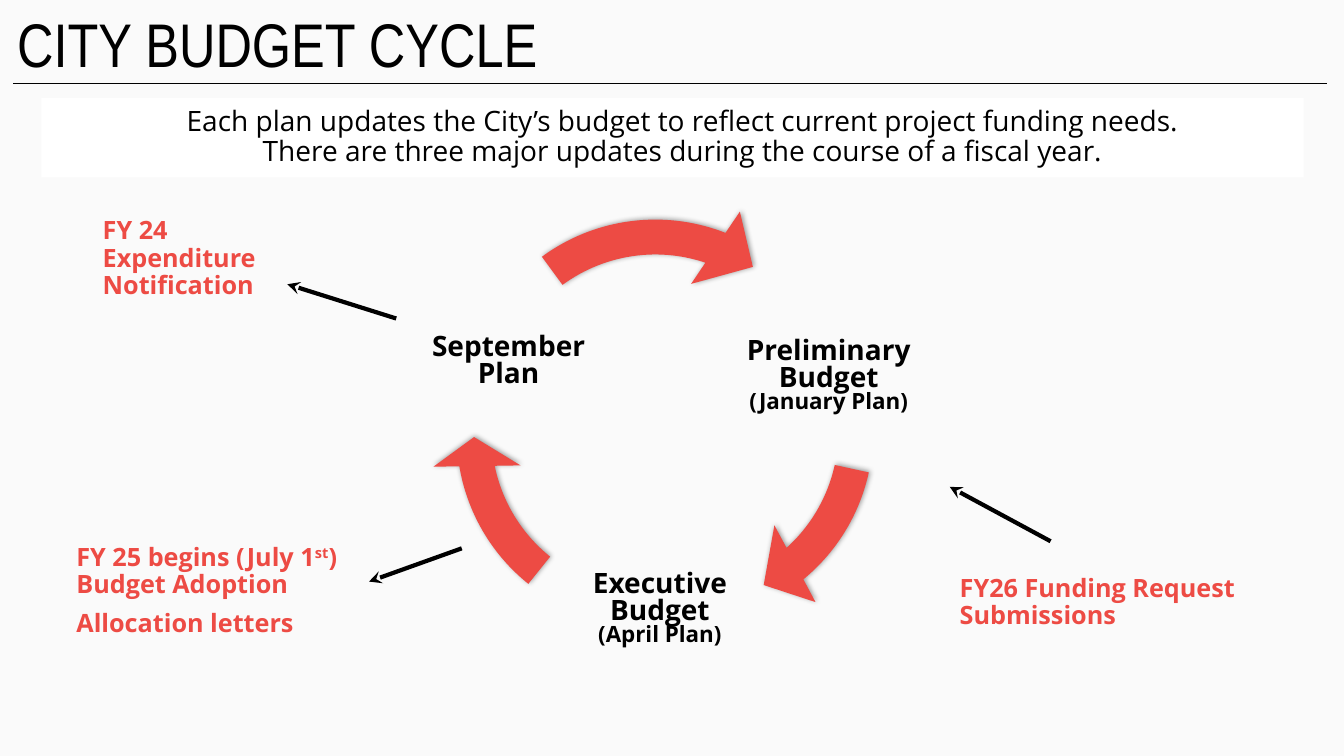
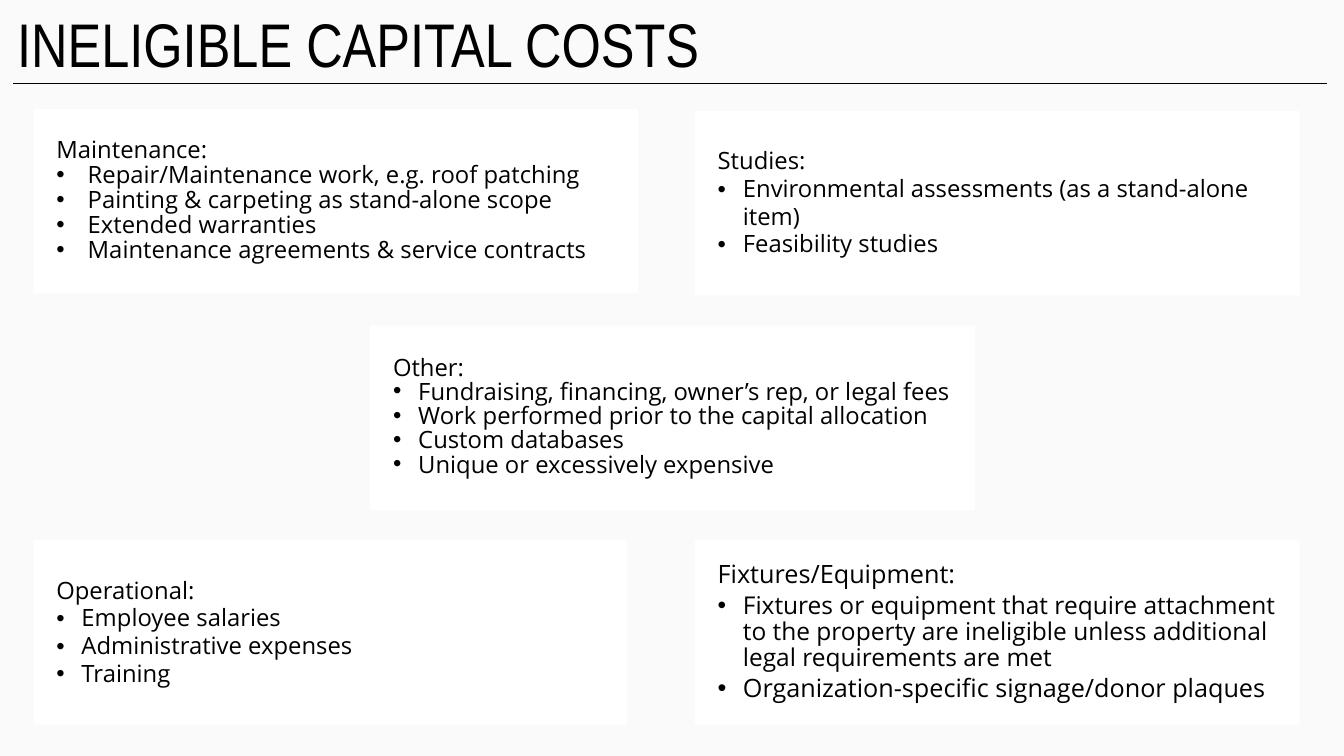
"""Build two slides on the city budget cycle and ineligible capital costs."""
import pptx
import pptx.dml.color
import pptx.enum.shapes
import pptx.enum.text
import pptx.oxml
import pptx.oxml.ns
import pptx.util

Inches = pptx.util.Inches
Pt = pptx.util.Pt
RGBColor = pptx.dml.color.RGBColor
qn = pptx.oxml.ns.qn
PP_ALIGN = pptx.enum.text.PP_ALIGN
MSO_ANCHOR = pptx.enum.text.MSO_ANCHOR
MSO_SHAPE = pptx.enum.shapes.MSO_SHAPE

PAPER = RGBColor(0xFA, 0xFA, 0xFA)
WHITE = RGBColor(0xFF, 0xFF, 0xFF)
BLACK = RGBColor(0x00, 0x00, 0x00)
CORAL = RGBColor(0xED, 0x4B, 0x44)
TITLE_FONT = "Arial Narrow"
BODY_FONT = "Open Sans"
ADJUSTMENT_PER_DEGREE = 0.6


def add_xml(parent, markup):
    namespaces = pptx.oxml.ns.nsdecls("a")
    element = pptx.oxml.parse_xml(markup.replace("/>", f" {namespaces}/>", 1)
                                  if markup.endswith("/>") and markup.count("<") == 1
                                  else markup.replace(">", f" {namespaces}>", 1))
    parent.append(element)


def place(shape, left, top, width, height):
    shape.left, shape.top = Inches(left), Inches(top)
    shape.width, shape.height = Inches(width), Inches(height)


def add_line(slide, start, end, width, arrow=False):
    line = slide.shapes.add_connector(
        pptx.enum.shapes.MSO_CONNECTOR.STRAIGHT, *map(Inches, start + end))
    line.line.color.rgb = BLACK
    line.line.width = Pt(width)
    if arrow:
        add_xml(line.line._get_or_add_ln(), '<a:tailEnd type="stealth"/>')
    add_xml(line.element.spPr, "<a:effectLst/>")
    return line


def style_master(presentation, layout):
    master = presentation.slide_master
    master.background.fill.solid()
    master.background.fill.fore_color.rgb = PAPER
    title_level = master.element.find(f".//{qn('p:titleStyle')}/{qn('a:lvl1pPr')}")
    title_level.set("algn", "l")
    title_level.set("marL", str(Inches(0.07)))
    title_level.find(f".//{qn('a:latin')}").set("typeface", TITLE_FONT)
    place(layout.placeholders[0], 0, 0, 13.33, 0.85)


def add_slide(presentation, layout, title):
    slide = presentation.slides.add_slide(layout)
    slide.shapes.title.text_frame.text = title
    slide.shapes.title.text_frame.auto_size = pptx.enum.text.MSO_AUTO_SIZE.NONE
    return slide


def add_title_rule(slide, layout):
    rule = add_line(slide, (0.13, 0.83), (13.16, 0.83), 1)
    layout.shapes.element.append(rule.element)


def set_indent(paragraph, left, first=0, bullet=False):
    properties = paragraph._p.get_or_add_pPr()
    properties.set("marL", str(Inches(left)))
    properties.set("indent", str(Inches(first)))
    if bullet:
        add_xml(properties, '<a:buClr><a:srgbClr val="000000"/></a:buClr>')
        add_xml(properties, '<a:buFont typeface="Arial"/>')
        add_xml(properties, '<a:buChar char="•"/>')
    else:
        add_xml(properties, "<a:buNone/>")


def style_paragraph(paragraph, size, color=BLACK, bold=False, align=PP_ALIGN.LEFT,
                    spacing=0.9, before=0):
    paragraph.alignment = align
    paragraph.line_spacing = spacing
    paragraph.space_before = Pt(before)
    for run in paragraph.runs:
        run.font.name = BODY_FONT
        run.font.size = Pt(size)
        run.font.bold = bold
        run.font.color.rgb = color


def fill_panel(shape, box, color, lines):
    place(shape, *box)
    shape.fill.solid()
    shape.fill.fore_color.rgb = color
    shape.line.fill.background()
    shape.shadow.inherit = False
    frame = shape.text_frame
    frame.word_wrap = True
    frame.auto_size = pptx.enum.text.MSO_AUTO_SIZE.NONE
    frame.vertical_anchor = MSO_ANCHOR.MIDDLE
    frame.text = "\n".join(lines)
    return frame.paragraphs


def add_rectangle(slide):
    return slide.shapes.add_shape(MSO_SHAPE.RECTANGLE, 0, 0, Inches(1), Inches(1))


def add_callout(slide, box, lines):
    paragraphs = fill_panel(add_rectangle(slide), box, PAPER, lines)
    for paragraph in paragraphs:
        set_indent(paragraph, 0.25)
        style_paragraph(paragraph, 18, CORAL, bold=True)
    return paragraphs


def add_stage(slide, box, name, note=None):
    frame = slide.shapes.add_textbox(*map(Inches, box)).text_frame
    frame.word_wrap = True
    frame.vertical_anchor = MSO_ANCHOR.MIDDLE
    frame.margin_left = frame.margin_right = Inches(0.03)
    frame.margin_top = frame.margin_bottom = Inches(0.03)
    frame.text = f"{name}\n{note}" if note else name
    for paragraph, size in zip(frame.paragraphs, (20, 16)):
        style_paragraph(paragraph, size, bold=True, align=PP_ALIGN.CENTER, spacing=0.8)


def add_cycle_arrow(slide, left, top, head, end, start, rotation=0):
    arrow = slide.shapes.add_shape(MSO_SHAPE.CIRCULAR_ARROW, Inches(left), Inches(top),
                                   Inches(4.32), Inches(4.32))
    angles = [angle * ADJUSTMENT_PER_DEGREE for angle in (head, end, start)]
    for index, value in enumerate([0.08, *angles, 0.1]):
        arrow.adjustments[index] = value
    arrow.rotation = rotation
    arrow.fill.solid()
    arrow.fill.fore_color.rgb = CORAL
    arrow.line.fill.background()
    add_xml(arrow.element.spPr,
            f'<a:effectLst><a:outerShdw blurRad="{Pt(4)}" dist="{Pt(1)}" dir="18900000">'
            '<a:srgbClr val="000000"><a:alpha val="40000"/></a:srgbClr>'
            "</a:outerShdw></a:effectLst>")


def add_cost_panel(shape, box, lines, sizes, spacing, before=0, indent=0.38, hanging=0.25):
    paragraphs = fill_panel(shape, box, WHITE, lines)
    for index, paragraph in enumerate(paragraphs):
        is_item = index > 0
        set_indent(paragraph, indent if is_item else 0.13,
                   -hanging if is_item else 0, bullet=is_item)
        style_paragraph(paragraph, sizes[min(index, len(sizes) - 1)], spacing=spacing,
                        before=before if is_item else 0)


def build_cycle(slide):
    add_stage(slide, (7.24, 2.82, 1.96, 1.83), "Preliminary Budget", "(January Plan)")
    add_stage(slide, (5.63, 5.13, 1.83, 1.83), "Executive Budget", "(April Plan)")
    add_stage(slide, (4.13, 2.68, 1.83, 1.83), "September Plan")
    add_cycle_arrow(slide, 4.6, 2.12, 12.47, 49.4, 12.36)
    add_cycle_arrow(slide, 4.27, 2.15, 9.6, 169.54, 128.77)
    add_cycle_arrow(slide, 4.34, 1.92, 13.84, 281.9, 225.42, rotation=8.3)

    introduction = fill_panel(slide.placeholders[1], (0.41, 0.97, 12.52, 0.79), WHITE, [
        "Each plan updates the City’s budget to reflect current project funding needs.",
        "There are three major updates during the course of a fiscal year."])
    for paragraph in introduction:
        set_indent(paragraph, 0.2)
        style_paragraph(paragraph, 20, align=PP_ALIGN.CENTER)

    adoption = add_callout(slide, (0.41, 5.2, 3.13, 1.33), [
        "FY 25 begins (July 1", "Budget Adoption", "Allocation letters"])
    ordinal = adoption[0].add_run()
    ordinal.text = "st"
    adoption[0].add_run().text = ")"
    style_paragraph(adoption[0], 18, CORAL, bold=True)
    ordinal.font._element.set("baseline", "30000")
    adoption[2].space_before = Pt(8.5)
    add_callout(slide, (0.67, 1.97, 2.11, 1.2), ["FY 24", "Expenditure Notification"])
    add_callout(slide, (9.17, 5.48, 3.42, 1), ["FY26 Funding Request", "Submissions"])

    for start, end in (((10.42, 5.37), (9.42, 4.83)),
                       ((3.93, 3.16), (2.85, 2.82)),
                       ((4.58, 5.44), (3.66, 5.77))):
        add_line(slide, start, end, 3, arrow=True)


def build_costs(slide):
    add_cost_panel(slide.placeholders[1], (0.33, 1.08, 6, 1.83), [
        "Maintenance:", "Repair/Maintenance work, e.g. roof patching",
        "Painting & carpeting as stand-alone scope", "Extended warranties",
        "Maintenance agreements & service contracts"],
        [17], 0.88, indent=0.44, hanging=0.31)
    add_cost_panel(add_rectangle(slide), (6.89, 1.1, 6, 1.83), [
        "Studies:", "Environmental assessments (as a stand-alone item)",
        "Feasibility studies"], [17], 0.97)
    add_cost_panel(add_rectangle(slide), (3.67, 3.23, 6, 1.83), [
        "Other:", "Fundraising, financing, owner’s rep, or legal fees",
        "Work performed prior to the capital allocation", "Custom databases",
        "Unique or excessively expensive"], [17], 0.8, before=1)
    add_cost_panel(add_rectangle(slide), (0.33, 5.36, 5.89, 1.83), [
        "Operational:", "Employee salaries", "Administrative expenses", "Training"],
        [17], 0.97)
    add_cost_panel(add_rectangle(slide), (6.89, 5.36, 6, 1.83), [
        "Fixtures/Equipment:",
        "Fixtures or equipment that require attachment to the property are ineligible "
        "unless additional legal requirements are met",
        "Organization-specific signage/donor plaques"], [18, 17.5, 18], 0.88, before=3.4)


def main():
    presentation = pptx.Presentation()
    presentation.slide_width, presentation.slide_height = Inches(13.33), Inches(7.5)
    layout = presentation.slide_layouts[1]
    style_master(presentation, layout)
    cycle = add_slide(presentation, layout, "CITY BUDGET CYCLE")
    add_title_rule(cycle, layout)
    build_cycle(cycle)
    build_costs(add_slide(presentation, layout, "INELIGIBLE CAPITAL COSTS"))
    presentation.save("out.pptx")


if __name__ == "__main__":
    main()
